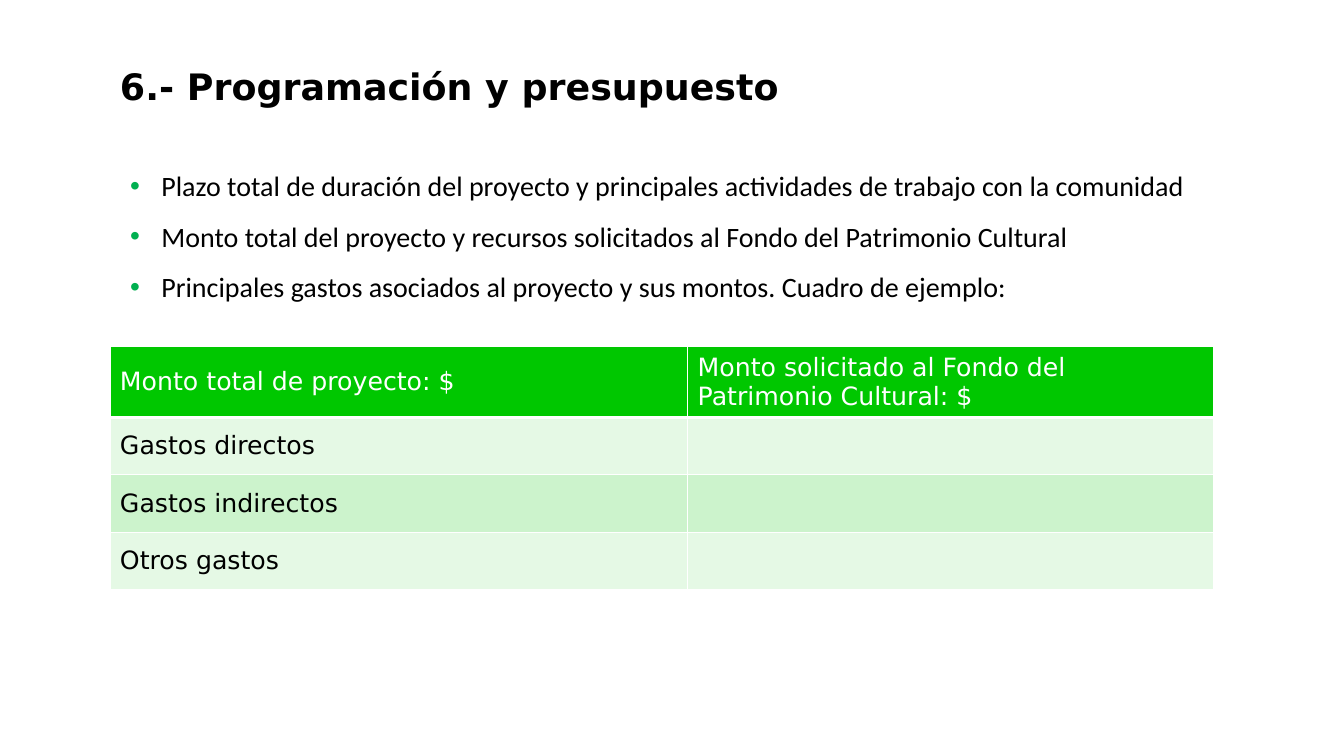
"""Build the slide on project schedule and budget."""
from lxml.etree import SubElement
from pptx import Presentation
from pptx.dml.color import RGBColor
from pptx.enum.text import MSO_ANCHOR, MSO_AUTO_SIZE, PP_ALIGN
from pptx.oxml import parse_xml
from pptx.oxml.ns import nsdecls, qn
from pptx.util import Inches, Pt

TITLE = "6.- Programación y presupuesto"
BULLETS = [
    "Plazo total de duración del proyecto y principales actividades de trabajo con la comunidad",
    "Monto total del proyecto y recursos solicitados al Fondo del Patrimonio Cultural",
    "Principales gastos asociados al proyecto y sus montos. Cuadro de ejemplo:",
]
BUDGET_ROWS = [
    ("Monto total de proyecto: $", "Monto solicitado al Fondo del Patrimonio Cultural: $"),
    ("Gastos directos", ""),
    ("Gastos indirectos", ""),
    ("Otros gastos", ""),
]
COLUMN_WIDTHS = [5.73, 5.22]
ROW_HEIGHTS = [0.66, 0.57, 0.57, 0.57]
ROW_OPACITIES = [100, 10, 20, 10]

BLACK = RGBColor(0x00, 0x00, 0x00)
WHITE = RGBColor(0xFF, 0xFF, 0xFF)
TABLE_GREEN = RGBColor(0x00, 0xC7, 0x00)
BULLET_GREEN = RGBColor(0x00, 0xB0, 0x50)
HEADING_FONT = "DejaVu Sans"
BODY_FONT = "Calibri"


def write(paragraph, text, font=HEADING_FONT, size=18, color=BLACK, bold=False, spacing=1.0):
    """Put formatted, left-aligned text in a paragraph."""
    paragraph.alignment = PP_ALIGN.LEFT
    paragraph.line_spacing = spacing
    paragraph.space_before = Pt(0)
    run = paragraph.add_run()
    run.text = text
    run.font.name = font
    run.font.size = Pt(size)
    run.font.bold = bold
    run.font.color.rgb = color


def place(shape, left, top, width, height):
    """Move and size a shape, in inches."""
    shape.left, shape.top = Inches(left), Inches(top)
    shape.width, shape.height = Inches(width), Inches(height)


def add_bullet(paragraph):
    """Give a paragraph a green bullet with a hanging indent."""
    properties = paragraph._p.get_or_add_pPr()
    properties.set("marL", str(Inches(0.31)))
    properties.set("indent", str(-Inches(0.31)))
    color = SubElement(properties, qn("a:buClr"))
    SubElement(color, qn("a:srgbClr"), val=str(BULLET_GREEN))
    SubElement(properties, qn("a:buFont"), typeface="Arial")
    SubElement(properties, qn("a:buChar"), char="•")


def style_cell(cell, opacity, bottom_width):
    """Fill a table cell with green and give it white borders."""
    cell.vertical_anchor = MSO_ANCHOR.MIDDLE
    cell.fill.solid()
    cell.fill.fore_color.rgb = TABLE_GREEN
    properties = cell._tc.get_or_add_tcPr()
    if opacity < 100:
        color = properties.find(qn("a:solidFill")).find(qn("a:srgbClr"))
        SubElement(color, qn("a:alpha"), val=str(opacity * 1000))
    for index, (side, width) in enumerate(zip("LRTB", (1, 1, 1, bottom_width))):
        border = parse_xml(
            f'<a:ln{side} {nsdecls("a")} w="{Pt(width)}"><a:solidFill>'
            f'<a:srgbClr val="{WHITE}"/></a:solidFill></a:ln{side}>'
        )
        properties.insert(index, border)


def add_budget_table(slide):
    """Add the example budget table."""
    frame = slide.shapes.add_table(
        len(BUDGET_ROWS), len(COLUMN_WIDTHS), Inches(1.09), Inches(3.44),
        Inches(sum(COLUMN_WIDTHS)), Inches(sum(ROW_HEIGHTS)),
    )
    table = frame.table
    table.horz_banding = False
    for column, width in zip(table.columns, COLUMN_WIDTHS):
        column.width = Inches(width)
    for row_index, texts in enumerate(BUDGET_ROWS):
        is_header = row_index == 0
        table.rows[row_index].height = Inches(ROW_HEIGHTS[row_index])
        for column_index, text in enumerate(texts):
            cell = table.cell(row_index, column_index)
            style_cell(cell, ROW_OPACITIES[row_index],
                       3 if is_header else 1)
            if text:
                write(cell.text_frame.paragraphs[0], text,
                      color=WHITE if is_header else BLACK)


def main():
    """Create the presentation and save it."""
    presentation = Presentation()
    presentation.slide_width = Inches(13.33)
    presentation.slide_height = Inches(7.5)
    slide = presentation.slides.add_slide(presentation.slide_layouts[1])

    title = slide.shapes.title
    place(title, 1.19, 0.16, 12.14, 1.45)
    frame = title.text_frame
    frame.margin_left = frame.margin_right = frame.margin_top = frame.margin_bottom = 0
    frame.vertical_anchor = MSO_ANCHOR.MIDDLE
    write(frame.paragraphs[0], TITLE, size=26, bold=True, spacing=0.9)

    add_budget_table(slide)

    body = slide.placeholders[1]
    place(body, 1.19, 1.46, 11.49, 1.56)
    frame = body.text_frame
    frame.auto_size = MSO_AUTO_SIZE.SHAPE_TO_FIT_TEXT
    for index, text in enumerate(BULLETS):
        paragraph = frame.add_paragraph() if index else frame.paragraphs[0]
        add_bullet(paragraph)
        write(paragraph, text, font=BODY_FONT, size=20, spacing=1.5)

    presentation.save("out.pptx")


if __name__ == "__main__":
    main()
